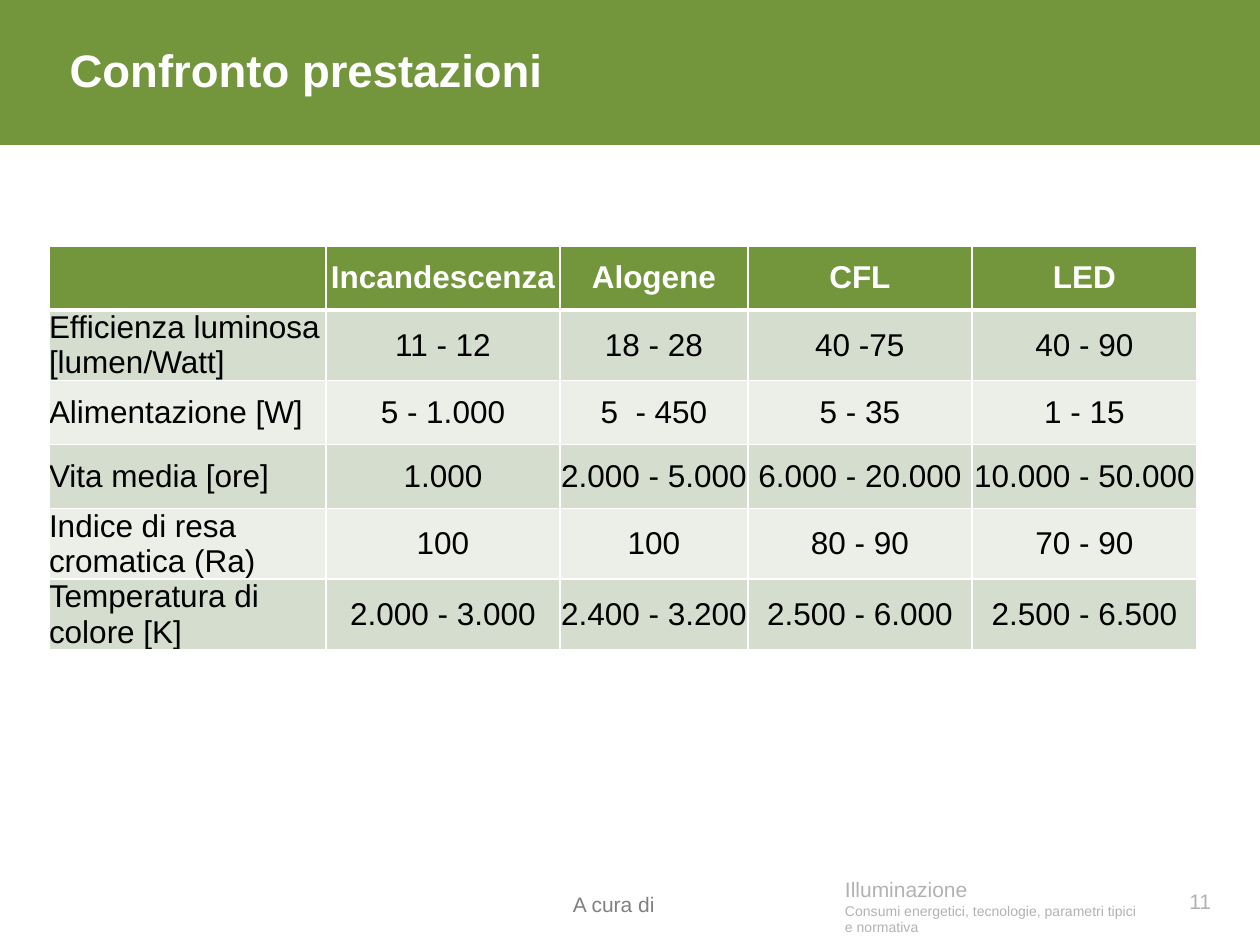
from lxml.etree import SubElement
from pptx import Presentation
from pptx.dml.color import RGBColor
from pptx.enum.shapes import MSO_SHAPE
from pptx.enum.text import MSO_ANCHOR, PP_ALIGN
from pptx.oxml.ns import qn
from pptx.util import Pt

PX = 914400 / 126
GREEN = RGBColor(0x73, 0x96, 0x3D)
BAND_DARK = RGBColor(0xD5, 0xDD, 0xCE)
BAND_LIGHT = RGBColor(0xEB, 0xEF, 0xE8)
WHITE = RGBColor(0xFF, 0xFF, 0xFF)
BLACK = RGBColor(0x00, 0x00, 0x00)
GRAY = RGBColor(0x80, 0x80, 0x80)
LIGHT_GRAY = RGBColor(0xB2, 0xB2, 0xB2)


def px(*lengths):
    return [round(length * PX) for length in lengths]


def write(para, text, size, color, bold=False, align=PP_ALIGN.LEFT):
    para.alignment = align
    span = para.add_run()
    span.text = text
    span.font.color.rgb = color
    for name, value in {"name": "Arial", "size": Pt(size), "bold": bold}.items():
        setattr(span.font, name, value)


deck = Presentation()
deck.slide_width, deck.slide_height = px(1260, 945)
page = deck.slides.add_slide(deck.slide_layouts[5])

banner = page.shapes.add_shape(MSO_SHAPE.RECTANGLE, *px(0, 0, 1260, 145))
banner.shadow.inherit = False
banner.fill.solid()
banner.fill.fore_color.rgb = GREEN
banner.line.fill.background()

title = page.shapes.title
banner.element.addnext(title.element)
title.left, title.top, title.width, title.height = px(57, 42, 1134, 55)
title_format = {
    "margin_top": 0,
    "margin_bottom": 0,
    "vertical_anchor": MSO_ANCHOR.MIDDLE,
    "word_wrap": True,
}
for name, value in title_format.items():
    setattr(title.text_frame, name, value)
write(title.text_frame.paragraphs[0], "Confronto prestazioni", 26, WHITE, True)

header = ["", "Incandescenza", "Alogene", "CFL", "LED"]
rows = [
    header,
    ["Efficienza luminosa [lumen/Watt]", "11 - 12", "18 - 28", "40 -75", "40 - 90"],
    ["Alimentazione [W]", "5 - 1.000", "5  - 450", "5 - 35", "1 - 15"],
    ["Vita media [ore]", "1.000", "2.000 - 5.000", "6.000 - 20.000", "10.000 - 50.000"],
    ["Indice di resa cromatica (Ra)", "100", "100", "80 - 90", "70 - 90"],
    ["Temperatura di colore [K]", "2.000 - 3.000", "2.400 - 3.200", "2.500 - 6.000", "2.500 - 6.500"],
]
column_widths = [277, 234, 188, 224, 225]
row_height = 64
cell_format = {
    "margin_left": 0,
    "margin_top": 0,
    "margin_right": 0,
    "margin_bottom": 0,
    "vertical_anchor": MSO_ANCHOR.MIDDLE,
}
table = page.shapes.add_table(
    len(rows), len(header), *px(49, 246, sum(column_widths), row_height * len(rows))
).table
for column, width in zip(table.columns, px(*column_widths)):
    column.width = width

for row_index, row in enumerate(rows):
    is_header = row_index == 0
    band = GREEN if is_header else BAND_DARK if row_index % 2 else BAND_LIGHT
    for column_index, text in enumerate(row):
        cell = table.cell(row_index, column_index)
        for name, value in cell_format.items():
            setattr(cell, name, value)
        if text:
            align = PP_ALIGN.CENTER if column_index else PP_ALIGN.LEFT
            color = WHITE if is_header else BLACK
            write(cell.text_frame.paragraphs[0], text, 18, color, is_header, align)
        properties = cell._tc.get_or_add_tcPr()
        for side in ("lnL", "lnR", "lnT", "lnB"):
            thick = (is_header and side == "lnB") or (row_index == 1 and side == "lnT")
            border = SubElement(properties, qn(f"a:{side}"), w=str(Pt(3 if thick else 1)))
            paint = SubElement(border, qn("a:solidFill"))
            SubElement(paint, qn("a:srgbClr"), val=str(WHITE))
        cell.fill.solid()
        cell.fill.fore_color.rgb = band

subtitle = "Consumi energetici, tecnologie, parametri tipici e normativa"
footers = [
    ((573, 876, 277, 50), (0, 6, 13, 0), MSO_ANCHOR.MIDDLE, PP_ALIGN.LEFT, GRAY,
     [("A cura di", 12)]),
    ((845, 877, 306, 60), (0, 0, 13, 0), MSO_ANCHOR.TOP, PP_ALIGN.LEFT, LIGHT_GRAY,
     [("Illuminazione", 12), (subtitle, 8)]),
    ((1152, 876, 72, 50), (13, 6, 13, 6), MSO_ANCHOR.MIDDLE, PP_ALIGN.RIGHT, LIGHT_GRAY,
     [("11", 12)]),
]
for place, margins, anchor, align, color, lines in footers:
    frame = page.shapes.add_textbox(*px(*place)).text_frame
    frame.word_wrap = True
    frame.vertical_anchor = anchor
    for side, margin in zip(("left", "top", "right", "bottom"), px(*margins)):
        setattr(frame, f"margin_{side}", margin)
    for index, (text, size) in enumerate(lines):
        para = frame.add_paragraph() if index else frame.paragraphs[0]
        write(para, text, size, color, align=align)

deck.save("out.pptx")
